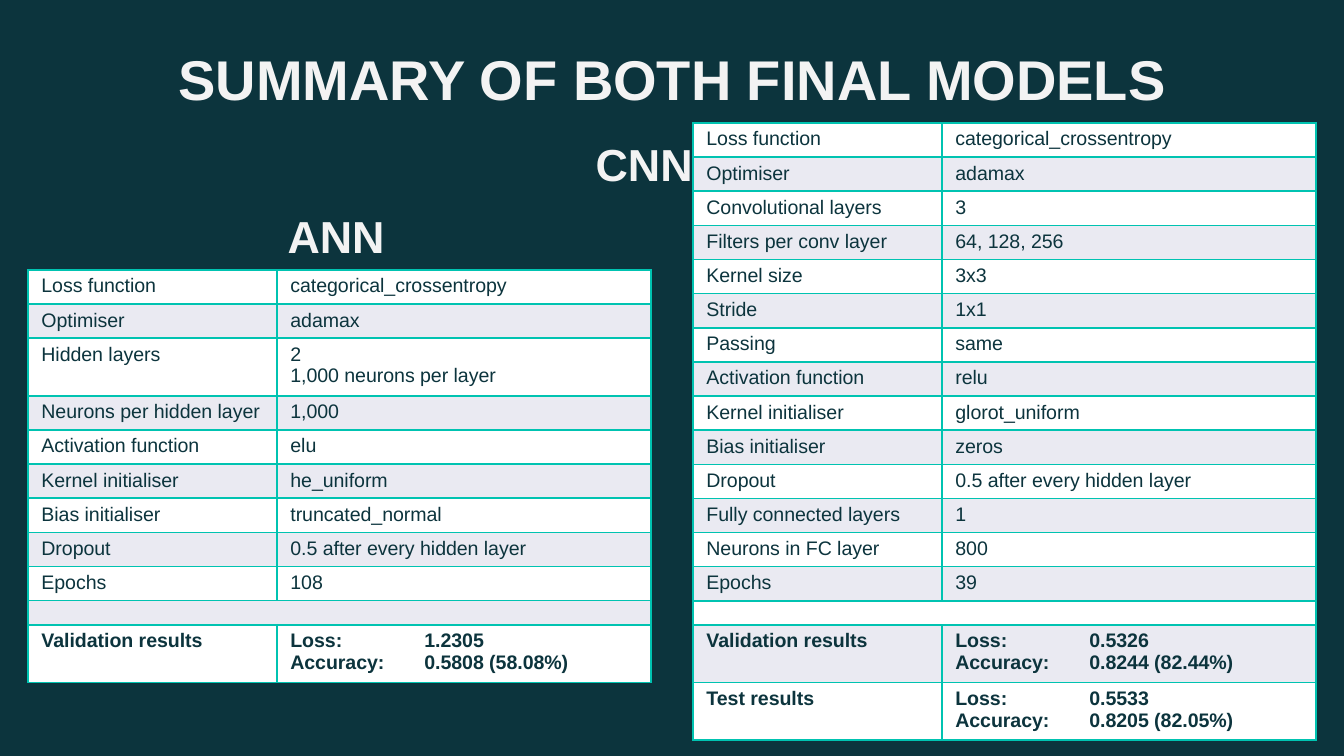
"""Build the slide comparing the final ANN and CNN models."""
from dataclasses import dataclass

from pptx import Presentation
from pptx import util as u
from pptx.dml.color import RGBColor
from pptx.enum import text
from pptx.oxml import ns
from lxml import etree


@dataclass(frozen=True)
class Theme:
    font: str = "Arial"
    background: str = "0C343D"
    heading: str = "F3F3F3"
    body: str = "0C343D"
    border: str = "00C3B1"
    bands: tuple = ("FFFFFF", "EAEAF2")
    title_size: float = 30
    label_size: float = 24
    body_size: float = 10.5
    spacer_size: float = 6


def px(length):
    return u.Emu(round(length * 914400 / 134.4))


class SummarySlide:
    def __init__(self, presentation, theme):
        self.theme = theme
        self.slide = presentation.slides.add_slide(presentation.slide_layouts[6])
        fill = self.slide.background.fill
        fill.solid()
        fill.fore_color.rgb = RGBColor.from_string(theme.background)

    def style(self, paragraph, size, color, bold):
        font = paragraph.font
        font.name = self.theme.font
        font.size = u.Pt(size)
        font.bold = bold
        font.color.rgb = RGBColor.from_string(color)

    def heading(self, words, left, top, width, height, size):
        box = self.slide.shapes.add_textbox(px(left), px(top), px(width), px(height))
        frame = box.text_frame
        frame.word_wrap = True
        frame.margin_left = frame.margin_right = u.Inches(0.1)
        frame.margin_top = frame.margin_bottom = u.Inches(0.1)
        frame.text = words
        line = frame.paragraphs[0]
        line.alignment = text.PP_ALIGN.CENTER
        self.style(line, size, self.theme.heading, True)

    def outline(self, cell):
        properties = cell._tc.get_or_add_tcPr()
        for side in ("lnL", "lnR", "lnT", "lnB"):
            edge = etree.SubElement(properties, ns.qn(f"a:{side}"), w=str(u.Pt(1)))
            paint = etree.SubElement(edge, ns.qn("a:solidFill"))
            etree.SubElement(paint, ns.qn("a:srgbClr"), val=self.theme.border)

    def cell(self, cell, words, band, bold):
        self.outline(cell)
        cell.fill.solid()
        cell.fill.fore_color.rgb = RGBColor.from_string(band)
        cell.margin_left = cell.margin_right = u.Inches(0.1)
        cell.margin_top = cell.margin_bottom = u.Mm(1)
        cell.text = words
        for line in cell.text_frame.paragraphs:
            if "\t" in line.text:
                tabs = etree.SubElement(line._p.get_or_add_pPr(), ns.qn("a:tabLst"))
                etree.SubElement(tabs, ns.qn("a:tab"), pos=str(px(134)), algn="l")
            if words:
                self.style(line, self.theme.body_size, self.theme.body, bold)
            else:
                size = str(self.theme.spacer_size * 100)
                etree.SubElement(line._p, ns.qn("a:endParaRPr"), sz=size)

    def table(self, settings, results, left, top, row_height):
        rows = [*settings, ("", ""), *results]
        widths = (249, 374)
        frame = self.slide.shapes.add_table(
            len(rows), 2, px(left), px(top), px(sum(widths)), px(row_height * len(rows)))
        table = frame.table
        table.first_row = table.horz_banding = False
        for column, width in zip(table.columns, widths):
            column.width = px(width)
        for index, entries in enumerate(rows):
            extra_lines = entries[1].count("\n")
            table.rows[index].height = px(row_height + 16 * extra_lines)
            if not any(entries):
                table.cell(index, 0).merge(table.cell(index, 1))
            for column, words in enumerate(entries):
                self.cell(table.cell(index, column), words,
                          self.theme.bands[index % 2], index > len(settings))


def result(name, loss, accuracy):
    return name, f"Loss: \t{loss}\nAccuracy:\t{accuracy}"


ANN_SETTINGS = [
    ("Loss function", "categorical_crossentropy"),
    ("Optimiser", "adamax"),
    ("Hidden layers", "2\n1,000 neurons per layer"),
    ("Neurons per hidden layer", "1,000"),
    ("Activation function", "elu"),
    ("Kernel initialiser", "he_uniform"),
    ("Bias initialiser", "truncated_normal"),
    ("Dropout", "0.5 after every hidden layer"),
    ("Epochs", "108"),
]
ANN_RESULTS = [result("Validation results", "1.2305", "0.5808 (58.08%)")]

CNN_SETTINGS = [
    ("Loss function", "categorical_crossentropy"),
    ("Optimiser", "adamax"),
    ("Convolutional layers", "3"),
    ("Filters per conv layer", "64, 128, 256"),
    ("Kernel size", "3x3"),
    ("Stride", "1x1"),
    ("Passing", "same"),
    ("Activation function", "relu"),
    ("Kernel initialiser", "glorot_uniform"),
    ("Bias initialiser", "zeros"),
    ("Dropout", "0.5 after every hidden layer"),
    ("Fully connected layers", "1"),
    ("Neurons in FC layer", "800"),
    ("Epochs", "39"),
]
CNN_RESULTS = [
    result("Validation results", "0.5326", "0.8244 (82.44%)"),
    result("Test results", "0.5533", "0.8205 (82.05%)"),
]


def main():
    presentation = Presentation()
    presentation.slide_width, presentation.slide_height = px(1344), px(756)
    theme = Theme()
    summary = SummarySlide(presentation, theme)
    summary.heading("SUMMARY OF BOTH FINAL MODELS", 106, 31, 1133, 85, theme.title_size)
    summary.table(ANN_SETTINGS, ANN_RESULTS, 28, 270, 24)
    summary.table(CNN_SETTINGS, CNN_RESULTS, 693, 123, 23)
    summary.heading("ANN", 270, 195, 132, 67, theme.label_size)
    summary.heading("CNN", 578, 123, 132, 67, theme.label_size)
    presentation.save("out.pptx")


if __name__ == "__main__":
    main()
